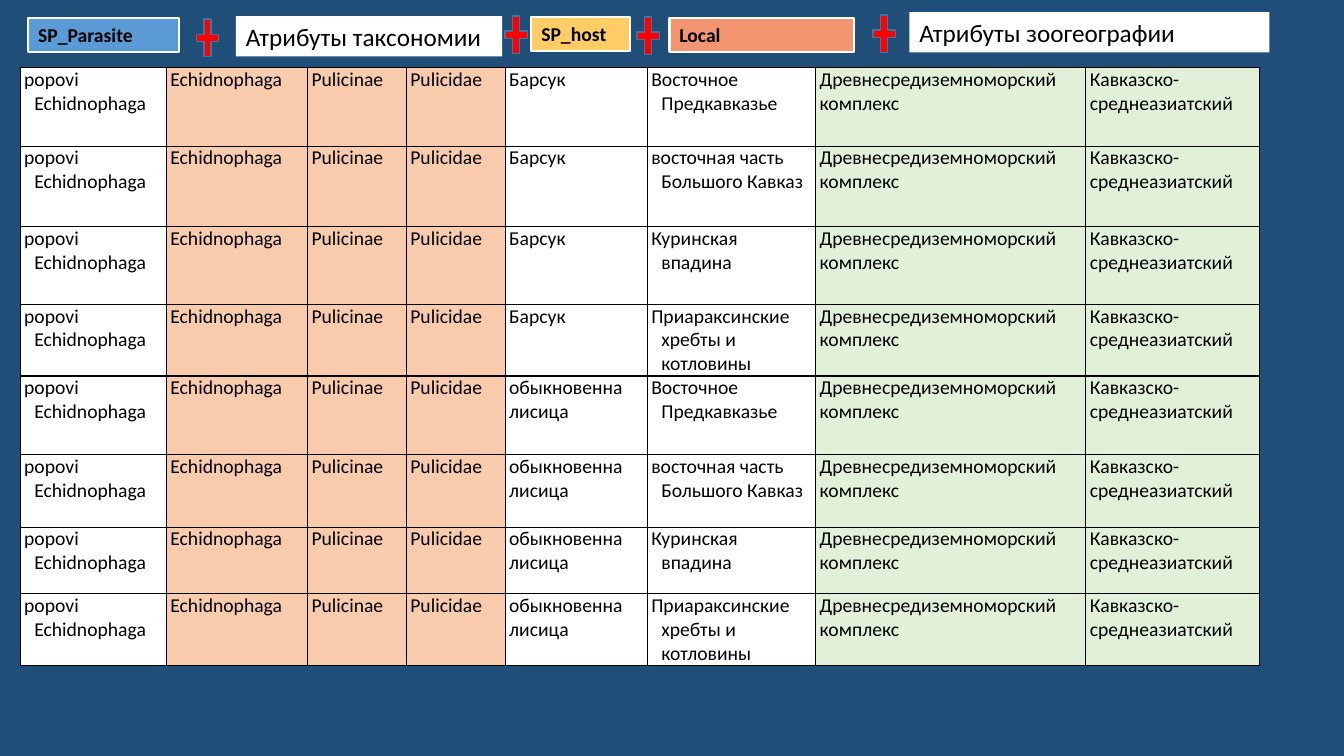
from lxml import etree
from pptx import Presentation
from pptx.dml.color import RGBColor
from pptx.enum.shapes import MSO_SHAPE
from pptx.enum.text import MSO_ANCHOR, MSO_AUTO_SIZE, PP_ALIGN
from pptx.oxml.ns import qn
from pptx.util import Inches, Pt

RECTANGLE, PLUS = MSO_SHAPE.RECTANGLE, MSO_SHAPE.MATH_PLUS
LEFT, TOP, MIDDLE = PP_ALIGN.LEFT, MSO_ANCHOR.TOP, MSO_ANCHOR.MIDDLE
FIT_SHAPE = MSO_AUTO_SIZE.SHAPE_TO_FIT_TEXT
FONT = "Calibri"

COLORS = {
    "background": "1F4E79", "black": "000000", "white": "FFFFFF",
    "taxonomy": "F8CBAD", "zoogeography": "E2F0D9",
    "parasite": "5B9BD5", "host": "FFCC66", "local": "F29570",
    "plus": "FF0000", "plus_line": "43739E",
}

# Content: every host is combined with every locality
HOSTS = ["Барсук", "обыкновенна лисица"]
LOCALITIES = [
    "Восточное Предкавказье",
    "восточная часть Большого Кавказ",
    "Куринская впадина",
    "Приараксинские хребты и котловины",
]
RECORDS = [
    ("popovi Echidnophaga", "Echidnophaga", "Pulicinae", "Pulicidae", host, locality,
     "Древнесредиземноморский комплекс", "Кавказско-среднеазиатский")
    for host in HOSTS for locality in LOCALITIES
]
# Column: width, fill, hanging indent
COLUMNS = [
    (1.45, "white", True), (1.4, "taxonomy", False),
    (0.98, "taxonomy", False), (0.98, "taxonomy", False),
    (1.41, "white", False), (1.67, "white", True),
    (2.68, "zoogeography", False), (1.72, "zoogeography", False),
]
ROW_HEIGHTS = [0.78, 0.8, 0.77, 0.59, 0.78, 0.72, 0.66, 0.59]

# Field: text, left, top, width, fill
KEY_FIELDS = [
    ("SP_Parasite", 0.28, 0.18, 1.5, "parasite"),
    ("SP_host", 5.27, 0.17, 0.98, "host"),
    ("Local", 6.64, 0.18, 1.83, "local"),
]
ATTRIBUTE_FIELDS = [
    ("Атрибуты таксономии", 2.34, 0.16, 2.64, "white"),
    ("Атрибуты зоогеографии", 9.02, 0.12, 3.57, "white"),
]
PLUS_POSITIONS = [(1.91, 0.12), (4.97, 0.09), (6.28, 0.1), (8.62, 0.08)]


def color(name):
    return RGBColor.from_string(COLORS[name])


def write(frame, text, size, bold=False):
    frame.text = text
    frame.word_wrap = True
    para = frame.paragraphs[0]
    para.alignment = LEFT
    font = para.runs[0].font
    font.name, font.size, font.bold = FONT, Pt(size), bold
    font.color.rgb = color("black")
    return para


def add_box(page, kind, left, top, width, height, fill, line=None, weight=1):
    box = page.shapes.add_shape(kind, Inches(left), Inches(top), Inches(width), Inches(height))
    box.shadow.inherit = False
    box.fill.solid()
    box.fill.fore_color.rgb = color(fill)
    if line:
        box.line.color.rgb = color(line)
        box.line.width = Pt(weight)
    else:
        box.line.fill.background()
    return box


def add_field(page, field, height, size, bold, line):
    text, left, top, width, fill = field
    box = add_box(page, RECTANGLE, left, top, width, height, fill, line, 1.5)
    write(box.text_frame, text, size, bold)
    box.text_frame.vertical_anchor = TOP
    box.text_frame.auto_size = FIT_SHAPE


def add_borders(cell):
    properties = cell._tc.get_or_add_tcPr()
    for index, side in enumerate(("a:lnL", "a:lnR", "a:lnT", "a:lnB")):
        border = etree.Element(qn(side), w=str(Pt(1)))
        fill = etree.SubElement(border, qn("a:solidFill"))
        etree.SubElement(fill, qn("a:srgbClr"), val=COLORS["black"])
        properties.insert(index, border)


def add_records(page):
    widths = [width for width, _, _ in COLUMNS]
    frame = page.shapes.add_table(len(RECORDS), len(COLUMNS), Inches(0.2), Inches(0.67),
                                  Inches(sum(widths)), Inches(sum(ROW_HEIGHTS)))
    table = frame.table
    table.first_row = table.horz_banding = False
    for column, width in zip(table.columns, widths):
        column.width = Inches(width)
    for row, height, record in zip(table.rows, ROW_HEIGHTS, RECORDS):
        row.height = Inches(height)
        for cell, text, (_, fill, hanging) in zip(row.cells, record, COLUMNS):
            cell.margin_left = cell.margin_right = Inches(0.04)
            cell.margin_top = cell.margin_bottom = 0
            cell.vertical_anchor = TOP
            cell.fill.solid()
            cell.fill.fore_color.rgb = color(fill)
            add_borders(cell)
            para = write(cell.text_frame, text, 14)
            if hanging:
                indent = para._p.get_or_add_pPr()
                indent.set("marL", str(Inches(0.1)))
                indent.set("indent", str(Inches(-0.1)))


def main():
    deck = Presentation()
    deck.slide_width, deck.slide_height = Inches(13.33), Inches(7.5)
    page = deck.slides.add_slide(deck.slide_layouts[6])
    page.background.fill.solid()
    page.background.fill.fore_color.rgb = color("background")

    add_records(page)

    # Header formula above the table
    for field in KEY_FIELDS:
        add_field(page, field, 0.34, 14, True, "white")
    for field in ATTRIBUTE_FIELDS:
        add_field(page, field, 0.4, 18, False, None)
    for left, top in PLUS_POSITIONS:
        plus = add_box(page, PLUS, left, top, 0.3, 0.51, "plus", "plus_line")
        plus.text_frame.vertical_anchor = MIDDLE

    deck.save("out.pptx")


if __name__ == "__main__":
    main()
